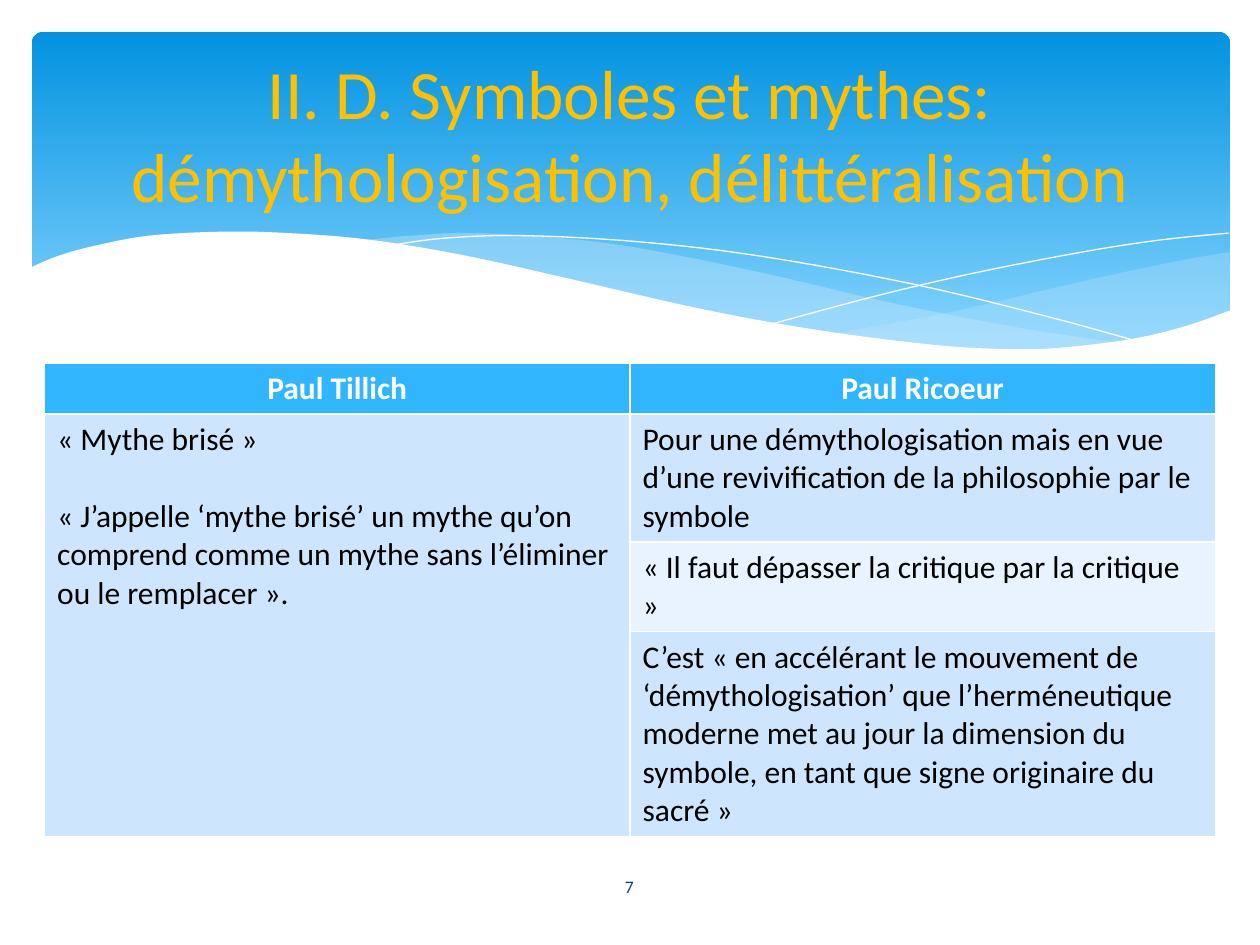
from dataclasses import dataclass
from typing import Optional

from lxml import etree
from pptx import Presentation
from pptx.dml.color import RGBColor
from pptx.enum.shapes import MSO_SHAPE
from pptx.enum.text import MSO_ANCHOR, MSO_AUTO_SIZE, PP_ALIGN
from pptx.oxml.ns import qn
from pptx.util import Cm, Pt

ROUND = MSO_SHAPE.ROUNDED_RECTANGLE
LEFT, CENTER = PP_ALIGN.LEFT, PP_ALIGN.CENTER
MIDDLE = MSO_ANCHOR.MIDDLE
FIXED = MSO_AUTO_SIZE.NONE
WHITE, BLACK, HEAD = "FFFFFF", "000000", "31B6FD"
DARK, PALE = "CEE5FE", "E8F3FF"
FONT = "Calibri"
STEPS = 6

Point = tuple[float, float]


@dataclass
class Wave:
    """Smooth curves joined end to end: filled if fill is set, else a hairline."""
    curves: list[list[Point]]
    fill: Optional[str] = None
    alpha: int = 100


@dataclass
class Cell:
    row: int
    col: int
    texts: list[str]
    fill: str


WAVES = [
    Wave([[(24.79, 5.08), (23.75, 5.26), (21.87, 5.66), (19.13, 6.3), (16.79, 6.73)],
          [(16.79, 6.73), (18.26, 6.91), (19.84, 7.04), (20.93, 7.05),
           (22.15, 6.96), (23.39, 6.73), (24.79, 6.27)]], "C6E7FC", 29),
    Wave([[(22.68, 6.93), (20.5, 6.6), (17.93, 6.1), (15.98, 5.64), (13.74, 5.16),
           (11.81, 4.85), (9.65, 4.7), (8.33, 4.75), (7.26, 4.85)],
          [(7.26, 4.85), (9.19, 5.16), (11.4, 5.64), (14.38, 6.3), (16.89, 6.76),
           (19, 7.01), (20.78, 7.06), (22.68, 6.93)]], "C6E7FC", 40),
    Wave([[(7.85, 4.95), (8.97, 4.8), (10.57, 4.75), (12.95, 4.88),
           (15.44, 5.18), (18.47, 5.74), (21.11, 6.38), (23.04, 6.91)]]),
    Wave([[(15.57, 6.53), (17.65, 5.97), (19.71, 5.49), (22, 5.05),
           (23.47, 4.83), (24.77, 4.7)]]),
    Wave([[(24.82, 6.25), (23.88, 6.58), (22.83, 6.83), (21.59, 6.99), (20.55, 7.04),
           (18.9, 6.96), (16.46, 6.65), (14.1, 6.22), (11.35, 5.59), (9.27, 5.13),
           (7.42, 4.83), (5.84, 4.7), (4.5, 4.67), (3.02, 4.75), (1.93, 4.95),
           (1.17, 5.16), (0.58, 5.41)],
          [(0.58, 8.36), (24.82, 8.36)]], WHITE),
]

CELLS = [
    Cell(0, 0, ["Paul Tillich"], HEAD),
    Cell(0, 1, ["Paul Ricoeur"], HEAD),
    Cell(1, 0, ["« Mythe brisé »",
                "« J’appelle ‘mythe brisé’ un mythe qu’on comprend comme "
                "un mythe sans l’éliminer ou le remplacer »."], DARK),
    Cell(1, 1, ["Pour une démythologisation mais en vue d’une revivification "
                "de la philosophie par le symbole"], DARK),
    Cell(2, 1, ["« Il faut dépasser la critique par la critique »"], PALE),
    Cell(3, 1, ["C’est « en accélérant le mouvement de ‘démythologisation’ que "
                "l’herméneutique moderne met au jour la dimension du symbole, "
                "en tant que signe originaire du sacré »"], DARK),
]
ROWS = [1.03, 2.54, 1.79, 4.06]


def paint(color, code: str) -> None:
    color.rgb = RGBColor.from_string(code)


def write(frame, *texts: str, size: float = 18, color: str = BLACK,
          bold: bool = False, align=LEFT, gap: float = 0) -> None:
    """Put one paragraph per text, with gap points between them."""
    for i, text in enumerate(texts):
        para = frame.add_paragraph() if i else frame.paragraphs[0]
        para.alignment = align
        if i:
            para.space_before = Pt(gap)
        run = para.add_run()
        run.text = text
        run.font.name, run.font.size, run.font.bold = FONT, Pt(size), bold
        paint(run.font.color, color)


def smooth(knots: list[Point]) -> list[Point]:
    """Run a Catmull-Rom curve through the knots."""
    ends = [knots[0], *knots, knots[-1]]
    dots = [knots[0]]
    for a, b, c, d in zip(ends, ends[1:], ends[2:], ends[3:]):
        for step in range(1, STEPS + 1):
            t = step / STEPS
            dots.append(tuple(
                b[k] + t * (c[k] - a[k]) / 2
                + t**2 * (2 * a[k] - 5 * b[k] + 4 * c[k] - d[k]) / 2
                + t**3 * (3 * b[k] - a[k] - 3 * c[k] + d[k]) / 2
                for k in (0, 1)))
    return dots


def draw_wave(shapes, wave: Wave) -> None:
    dots = [(Cm(x), Cm(y)) for curve in wave.curves for x, y in smooth(curve)]
    pen = shapes.build_freeform(*dots[0])
    pen.add_line_segments(dots[1:], close=wave.fill is not None)
    shape = pen.convert_to_shape()
    shape.shadow.inherit = False
    if wave.fill is None:
        shape.fill.background()
        paint(shape.line.color, WHITE)
        shape.line.width = Pt(0)
        return
    shape.fill.solid()
    paint(shape.fill.fore_color, wave.fill)
    shape.line.fill.background()
    if wave.alpha < 100:
        tint = shape.fill._xPr.find(".//" + qn("a:srgbClr"))
        etree.SubElement(tint, qn("a:alpha")).set("val", str(wave.alpha * 1000))


def draw_sky(shapes) -> None:
    sky = shapes.add_shape(ROUND, Cm(0.64), Cm(0.64), Cm(24.16), Cm(6.86))
    sky.adjustments[0] = 0.034
    sky.shadow.inherit = False
    sky.line.fill.background()
    sky.fill.gradient()
    sky.fill.gradient_angle = 270
    for stop, place, code in zip(sky.fill.gradient_stops, (0, 0.9), ("0293E0", "83D3FE")):
        stop.position = place
        paint(stop.color, code)


def draw_table(shapes) -> None:
    table = shapes.add_table(len(ROWS), 2, Cm(0.9), Cm(7.32),
                             Cm(23.6), Cm(sum(ROWS))).table
    for row, high in zip(table.rows, ROWS):
        row.height = Cm(high)
    table.cell(1, 0).merge(table.cell(3, 0))
    for item in CELLS:
        cell = table.cell(item.row, item.col)
        cell.fill.solid()
        paint(cell.fill.fore_color, item.fill)
        top = item.row == 0
        write(cell.text_frame, *item.texts, bold=top, gap=22,
              color=WHITE if top else BLACK, align=CENTER if top else LEFT)


def main() -> None:
    deck = Presentation()
    deck.slide_width, deck.slide_height = Cm(25.4), Cm(19.05)
    slide = deck.slides.add_slide(deck.slide_layouts[5])
    shapes = slide.shapes

    draw_sky(shapes)
    for wave in WAVES:
        draw_wave(shapes, wave)
    draw_table(shapes)

    page = shapes.add_textbox(Cm(11.07), Cm(17.37), Cm(3.23), Cm(1.02)).text_frame
    page.word_wrap = True
    page.vertical_anchor = MIDDLE
    write(page, "7", size=10, color="073E87", align=CENTER)

    title = shapes.title
    title.left, title.top, title.width, title.height = Cm(1.27), Cm(0.94), Cm(22.86), Cm(3.48)
    title.text_frame.auto_size = FIXED
    title.text_frame.vertical_anchor = MIDDLE
    write(title.text_frame, "II. D. Symboles et mythes: démythologisation, délittéralisation",
          size=39.6, color="FFC000", align=CENTER)
    shapes._spTree.append(title._element)

    deck.save("out.pptx")


if __name__ == "__main__":
    main()
